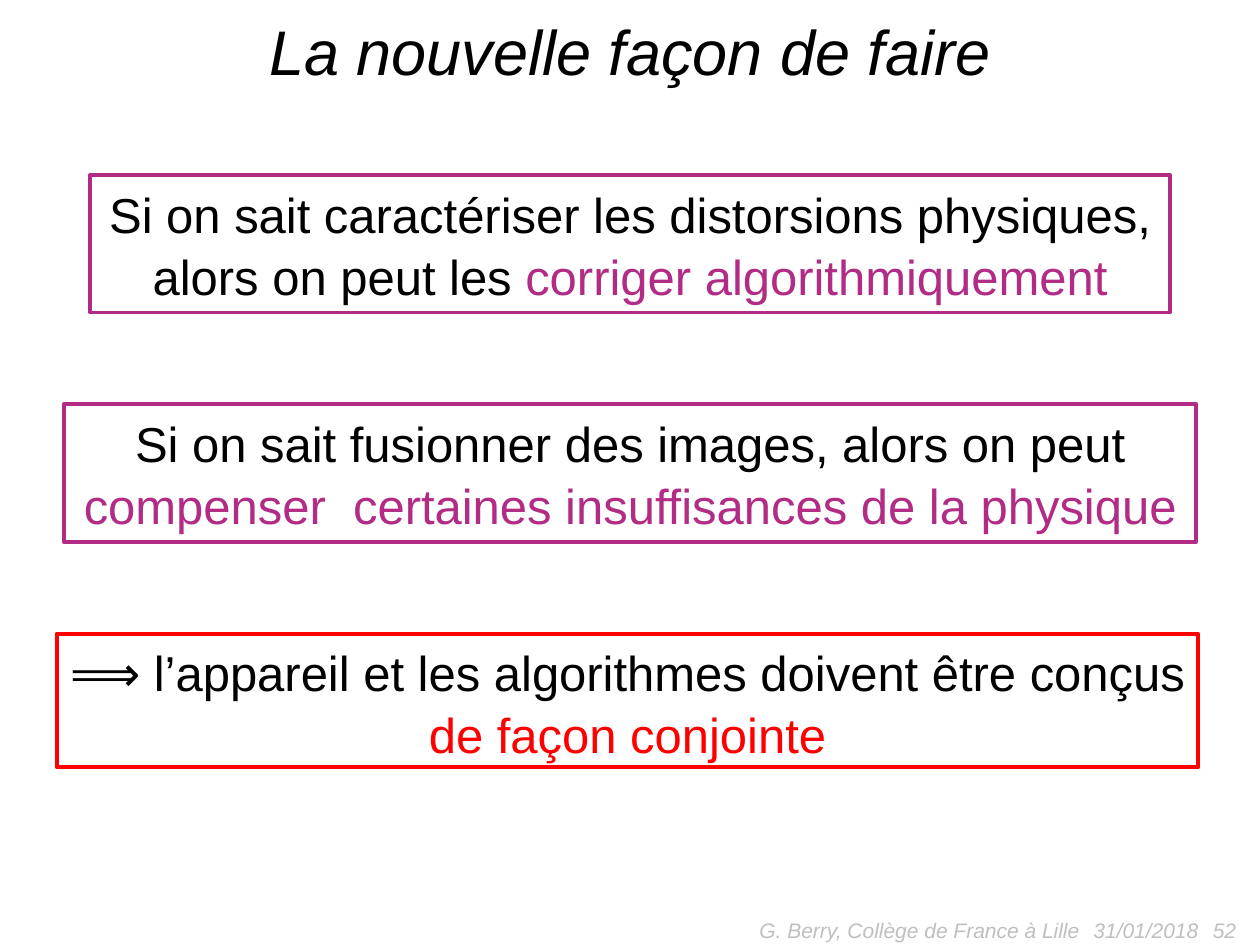
"""Builds the slide on the new way of designing cameras and algorithms together."""
from pptx import Presentation
from pptx import util as u
from pptx.dml.color import RGBColor
from pptx.enum import shapes, text

THEME = {
    "font": "Arial", "black": "000000", "purple": "B22C85", "red": "FF0000",
    "grey": "BFBFBF", "title": 36, "body": 28, "footer": 12,
}
ALIGN = text.PP_ALIGN
ANCHOR = text.MSO_ANCHOR

TITLE = "La nouvelle façon de faire"
STATEMENTS = [
    (8.57, 1.09, 5.0, "purple", [
        [("Si on sait caractériser les distorsions physiques,", "black")],
        [("alors on peut les ", "black"), ("corriger algorithmiquement", "purple")],
    ]),
    (8.99, 1.09, 5.0, "purple", [
        [("Si on sait fusionner des images, alors on peut", "black")],
        [("compenser  certaines insuffisances de la physique", "purple")],
    ]),
    (9.06, 1.06, 4.98, "red", [
        [("⟹ l’appareil et les algorithmes doivent être conçus", "black")],
        [("de façon conjointe", "red")],
    ]),
]
FIRST_TOP, PITCH = 1.39, 1.82
FOOTERS = [
    ("52", 7.58, 2.33, ALIGN.RIGHT),
    ("G. Berry, Collège de France à Lille", 5.5, 3.17, ALIGN.RIGHT),
    ("31/01/2018", 8.58, 2.33, ALIGN.LEFT),
]
FOOTER_TOP, FOOTER_HEIGHT = 7.18, 0.4


def color(name):
    return RGBColor.from_string(THEME[name])


def write(shape, lines, size, align=ALIGN.CENTER, anchor=ANCHOR.TOP,
          italic=False, spacing=None, wrap=True):
    frame = shape.text_frame
    frame.word_wrap = wrap
    frame.auto_size = text.MSO_AUTO_SIZE.NONE
    frame.vertical_anchor = anchor
    frame.margin_left = frame.margin_right = u.Inches(0.1)
    frame.margin_top = frame.margin_bottom = u.Inches(0.05)
    for index, pieces in enumerate(lines):
        paragraph = frame.paragraphs[0] if index == 0 else frame.add_paragraph()
        paragraph.alignment = align
        paragraph.space_before = u.Pt(0)
        if spacing:
            paragraph.line_spacing = spacing
        for words, color_name in pieces:
            run = paragraph.add_run()
            run.text = words
            run.font.name = THEME["font"]
            run.font.size = u.Pt(THEME[size])
            run.font.italic = italic
            run.font.color.rgb = color(color_name)


def add_statement(slide, top, width, height, center, border, lines):
    box = slide.shapes.add_shape(
        shapes.MSO_SHAPE.RECTANGLE, u.Inches(center - width / 2), u.Inches(top),
        u.Inches(width), u.Inches(height))
    box.shadow.inherit = False
    box.fill.background()
    box.line.color.rgb = color(border)
    box.line.width = u.Pt(2.25)
    write(box, lines, "body", spacing=1.05, wrap=False)


def main():
    presentation = Presentation()
    presentation.slide_width = u.Inches(10)
    presentation.slide_height = u.Inches(7.5)
    slide = presentation.slides.add_slide(presentation.slide_layouts[5])

    title = slide.shapes.title
    title.left, title.top = u.Inches(0.25), u.Inches(0.05)
    title.width, title.height = u.Inches(9.5), u.Inches(0.71)
    write(title, [[(TITLE, "black")]], "title", italic=True)

    for index, (width, height, center, border, lines) in enumerate(STATEMENTS):
        add_statement(slide, FIRST_TOP + index * PITCH, width, height, center, border, lines)

    for words, left, width, align in FOOTERS:
        footer = slide.shapes.add_textbox(
            u.Inches(left), u.Inches(FOOTER_TOP), u.Inches(width), u.Inches(FOOTER_HEIGHT))
        write(footer, [[(words, "grey")]], "footer", align=align,
              anchor=ANCHOR.MIDDLE, italic=True)

    presentation.save("out.pptx")


if __name__ == "__main__":
    main()
